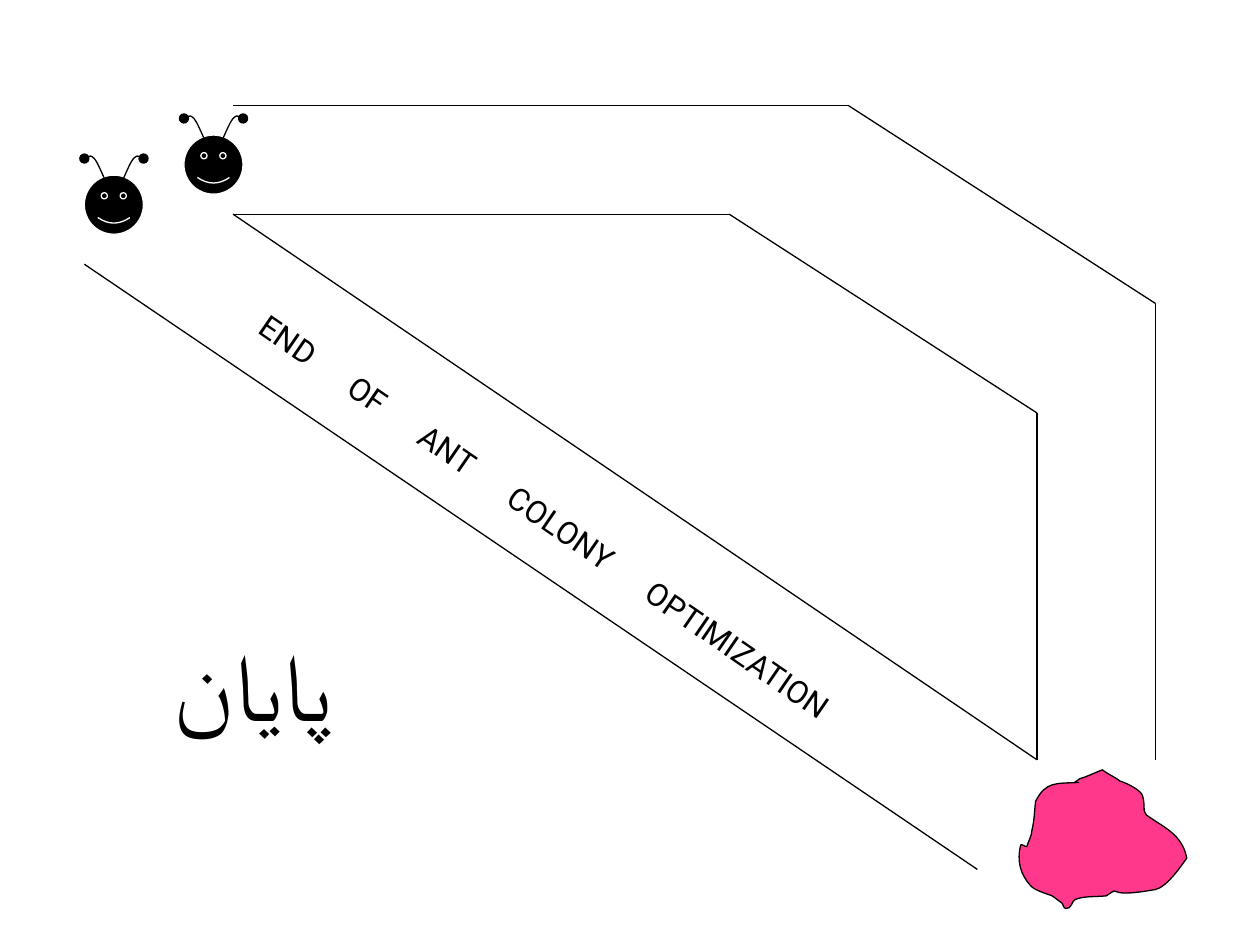
from lxml import etree
from pptx import Presentation
from pptx import util as u
from pptx.dml.color import RGBColor
from pptx.enum import shapes, text
from pptx.oxml.ns import qn

BLACK = RGBColor(0x00, 0x00, 0x00)
WHITE = RGBColor(0xFF, 0xFF, 0xFF)
PINK = RGBColor(0xFF, 0x38, 0x8C)
FONT = "Roboto"
LINE_WIDTH = 0.75

# Left edge and top of each ant
ANTS = [(48.2, 88.6), (105.1, 65.7)]
ANT_WIDTH = 33.8
HEAD_DROP = 11.5

# Right antenna, measured from the ant's middle axis and top
ANTENNA = [(5.6, 13), (7.6, 8.6), (9.7, 3.6), (11.2, 2),
           (13.3, 0), (14.8, 0.7), (16.9, 2)]

# Edges of the trails, each a chain of corners
TRAILS = [
    [(133.2, 122.4), (416.7, 122.4), (592.6, 236), (592.6, 434.2)],
    [(133.2, 60.2), (484.6, 60.2), (660.4, 173.5), (660.4, 434.2)],
    [(133.2, 122.4), (592.6, 434.2)],
    [(48.2, 151), (558.5, 496.8)],
]

# Start point, then two control points and an end point for each curve
FOOD = [
    (616.3, 447.1),
    (603.4, 447.8), (597.6, 446.4), (591.8, 457.9),
    (591.1, 463.7), (591.1, 468.7), (589.7, 474.5),
    (589.7, 477.4), (587.5, 481), (586.8, 483.8),
    (585.4, 483.8), (583.2, 481.7), (583.2, 483.1),
    (581, 492.5), (583.2, 499.7), (589, 506.2),
    (591.8, 509), (597.6, 510.5), (601.2, 511.9),
    (603.4, 513.4), (607, 516.2), (607, 516.2),
    (607.7, 517), (607.7, 519.1), (609.1, 519.1),
    (612, 519.8), (612.7, 514.8), (614.2, 514.1),
    (619.2, 511.9), (625.7, 512.6), (632.2, 511.9),
    (643, 504.7), (627.8, 514.1), (660.2, 508.3),
    (666.7, 506.9), (674.6, 495.4), (678.2, 490.3),
    (675.4, 476.6), (665.3, 473), (655.2, 465.8),
    (654.5, 465.1), (654.5, 464.4), (653.8, 463),
    (653.8, 460.8), (653.8, 457.9), (653, 455),
    (652.3, 451.4), (643, 447.1), (640.1, 446.4),
    (636.5, 443.5), (633.6, 442.8), (630, 439.9),
    (625.7, 441.4), (622.1, 443.5), (617, 445),
    (613.4, 447.8), (612.7, 447.1), (616.3, 447.1),
]

WORDS = ["END", "OF", "ANT", "COLONY", "OPTIMIZATION"]
WORD_STOPS = [61.5, 110.4, 172.2, 268]


def style_shape(shape, fill, line):
    shape.shadow.inherit = False
    if fill is None:
        shape.fill.background()
    else:
        shape.fill.solid()
        shape.fill.fore_color.rgb = fill
    shape.line.color.rgb = line
    shape.line.width = u.Pt(LINE_WIDTH)


def bend_segments(shape):
    """Join every three straight segments into one cubic curve."""
    path = next(shape._element.iter(qn("a:path")))
    segments = path.findall(qn("a:lnTo"))
    for first in range(0, len(segments), 3):
        curve = etree.Element(qn("a:cubicBezTo"))
        segments[first].addprevious(curve)
        for segment in segments[first:first + 3]:
            curve.append(segment[0])
            path.remove(segment)


def add_curved_shape(container, points, fill=None, close=False):
    corners = [(u.Pt(x), u.Pt(y)) for x, y in points]
    builder = container.build_freeform(*corners[0])
    builder.add_line_segments(corners[1:], close=close)
    shape = builder.convert_to_shape()
    bend_segments(shape)
    style_shape(shape, fill, BLACK)
    return shape


def add_ant(slide, left, top):
    ant = slide.shapes.add_group_shape().shapes
    head = ant.add_shape(shapes.MSO_SHAPE.SMILEY_FACE, u.Pt(left), u.Pt(top + HEAD_DROP),
                         u.Pt(ANT_WIDTH), u.Pt(ANT_WIDTH))
    style_shape(head, BLACK, WHITE)
    middle = left + ANT_WIDTH / 2
    for side in (1, -1):
        points = [(middle + side * x, top + y) for x, y in ANTENNA]
        antenna = add_curved_shape(ant, points)
        etree.SubElement(antenna.line._get_or_add_ln(), qn("a:tailEnd"), type="oval")


def add_trail(slide, corners):
    for start, end in zip(corners, corners[1:]):
        connector = slide.shapes.add_connector(
            shapes.MSO_CONNECTOR.STRAIGHT, *(u.Pt(value) for value in start + end))
        connector.line.color.rgb = BLACK
        connector.line.width = u.Pt(LINE_WIDTH)
        etree.SubElement(connector._element.spPr, qn("a:effectLst"))


def add_text(slide, content, box):
    """Add a one-line text box and return it with its paragraph."""
    shape = slide.shapes.add_textbox(*(u.Pt(value) for value in box))
    frame = shape.text_frame
    frame.word_wrap = True
    frame.auto_size = text.MSO_AUTO_SIZE.SHAPE_TO_FIT_TEXT
    paragraph = frame.paragraphs[0]
    paragraph.add_run().text = content
    return shape, paragraph


def set_font(paragraph, size):
    paragraph.font.name = FONT
    paragraph.font.size = u.Pt(size)
    paragraph.font.color.rgb = BLACK


def add_trail_title(slide):
    shape, paragraph = add_text(slide, "\t".join(WORDS), (56.2, 280.8, 510.5, 28.8))
    shape.rotation = 34.6
    shape.text_frame.margin_left = u.Pt(59.7)
    stops = etree.SubElement(paragraph._p.get_or_add_pPr(), qn("a:tabLst"))
    for stop in WORD_STOPS:
        etree.SubElement(stops, qn("a:tab"), pos=str(u.Pt(stop)), algn="l")
    set_font(paragraph, 18)


def add_closing_word(slide):
    paragraph = add_text(slide, "پایان", (25.2, 355, 238.3, 72))[1]
    paragraph.alignment = text.PP_ALIGN.CENTER
    paragraph._p.get_or_add_pPr().set("rtl", "1")
    set_font(paragraph, 54)
    run_properties = paragraph.runs[0]._r.get_or_add_rPr()
    etree.SubElement(run_properties, qn("a:cs"), typeface=FONT)


def main():
    presentation = Presentation()
    presentation.slide_width = u.Pt(720)
    presentation.slide_height = u.Pt(540)
    slide = presentation.slides.add_slide(presentation.slide_layouts[6])
    for left, top in ANTS:
        add_ant(slide, left, top)
    add_curved_shape(slide.shapes, FOOD, PINK, close=True)
    for corners in TRAILS:
        add_trail(slide, corners)
    add_trail_title(slide)
    add_closing_word(slide)
    presentation.save("out.pptx")


if __name__ == "__main__":
    main()
